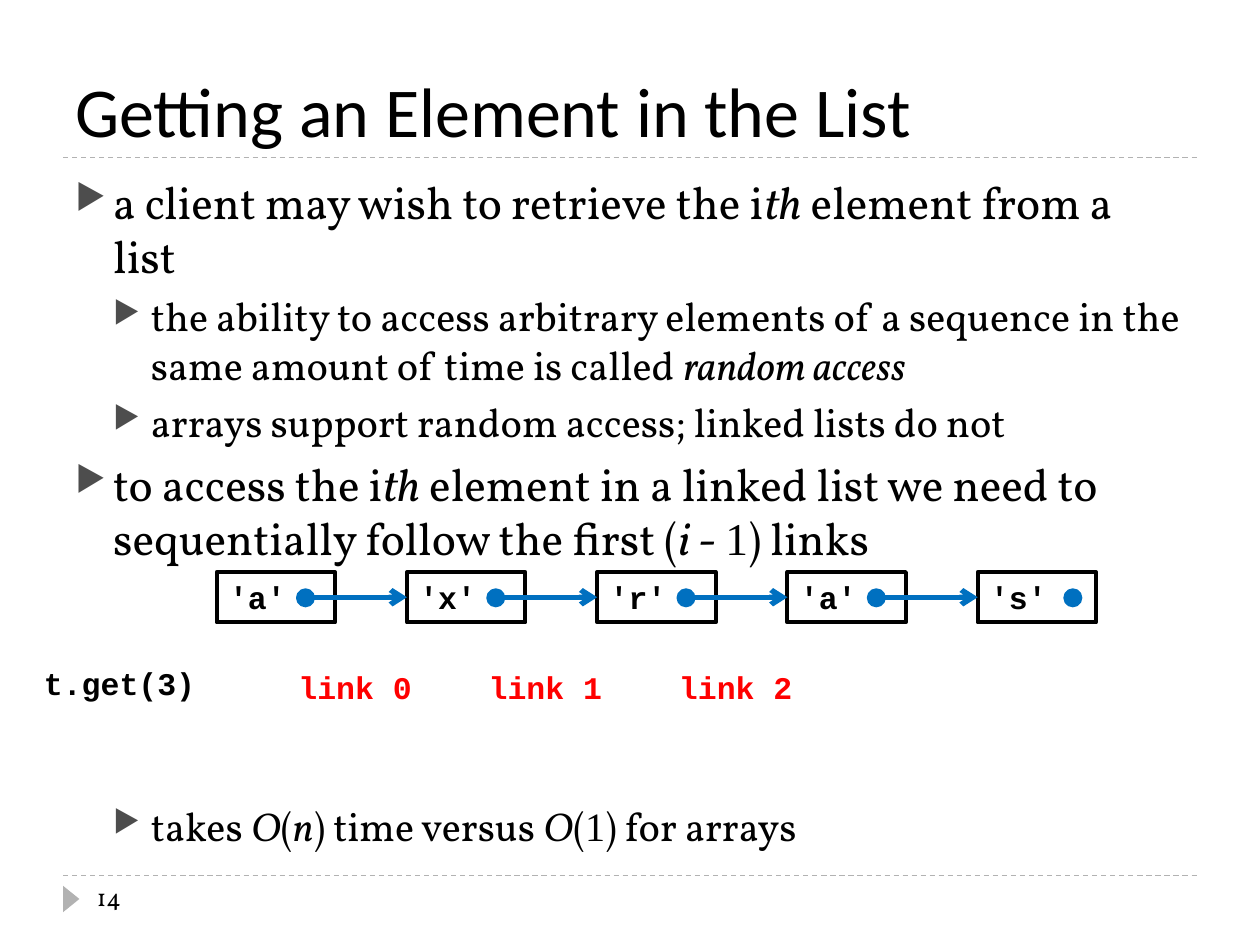
from pptx import Presentation
from pptx.dml.color import RGBColor
from pptx.enum.dml import MSO_LINE
from pptx.enum.shapes import MSO_CONNECTOR, MSO_SHAPE
from pptx.enum.text import MSO_ANCHOR, PP_ALIGN
from pptx.oxml.ns import qn
from pptx.util import Emu, Pt
from lxml import etree

PX = 9144  # 100 px to the inch
STRAIGHT = MSO_CONNECTOR.STRAIGHT
RECTANGLE, OVAL = MSO_SHAPE.RECTANGLE, MSO_SHAPE.OVAL
TRIANGLE = MSO_SHAPE.ISOSCELES_TRIANGLE
DASH = MSO_LINE.DASH
TOP, BOTTOM = MSO_ANCHOR.TOP, MSO_ANCHOR.BOTTOM
LEFT_SIDE = 1

BLACK, RED, BLUE, GREY, BULLET_GREY = "000000", "FF0000", "0070C0", "B2B2B2", "4D4D4D"
HEADING, SERIF, DIGIT, CODE = "Calibri", "Vollkorn", "Times New Roman", "Courier New"

# level, space before in points, runs of (text, style)
BODY = [
    (0, 6, [("a client may wish to retrieve the i", ""), ("th", "italic"),
            (" element from a list", "")]),
    (1, 5, [("the ability to access arbitrary elements of a sequence in the "
             "same amount of time is called ", ""), ("random access", "italic")]),
    (1, 5, [("arrays support random access; linked lists do not", "")]),
    (0, 6, [("to access the i", ""), ("th", "italic"),
            (" element in a linked list we need to sequentially follow the first (", ""),
            ("i", "italic"), (" - ", ""), ("1", "digit"), (") links", "")]),
    # the wide gap leaves room for the linked list
    (1, 135, [("takes ", ""), ("O", "italic"), ("(", ""), ("n", "italic"),
              (") time versus ", ""), ("O", "italic"), ("(", ""), ("1", "digit"),
              (") for arrays", "")]),
]
BODY_SIZES = (26, 23)


def px(length):
    return Emu(length * PX)


def color(hex_string):
    return RGBColor.from_string(hex_string)


def format_run(run, font, size, hex_string, bold=False):
    run.font.name = font
    run.font.size = Pt(size)
    run.font.color.rgb = color(hex_string)
    run.font.bold = bold


def add_text(slide, box, text, font, size, hex_string=BLACK, bold=False,
             anchor=TOP, wrap=True):
    shape = slide.shapes.add_textbox(*map(px, box))
    frame = shape.text_frame
    frame.word_wrap = wrap
    frame.vertical_anchor = anchor
    frame.text = text
    format_run(frame.paragraphs[0].runs[0], font, size, hex_string, bold)


def add_shape(slide, kind, box, fill=None, line=None, width=1):
    shape = slide.shapes.add_shape(kind, *map(px, box))
    shape.shadow.inherit = False
    if fill:
        shape.fill.solid()
        shape.fill.fore_color.rgb = color(fill)
    else:
        shape.fill.background()
    if line:
        shape.line.color.rgb = color(line)
        shape.line.width = Pt(width)
    else:
        shape.line.fill.background()
    return shape


def add_line(slide, start, end, hex_string, width):
    line = slide.shapes.add_connector(STRAIGHT, *map(px, start + end))
    line.line.color.rgb = color(hex_string)
    line.line.width = Pt(width)
    properties = line._element.spPr
    etree.SubElement(properties, qn("a:effectLst"))
    return line


def add_rule(slide, left, top, width):
    rule = add_line(slide, (left, top), (left + width, top), GREY, 0.75)
    rule.line.dash_style = DASH


def add_bullet(paragraph, level):
    """Give the paragraph a hanging indent and a grey triangle bullet."""
    properties = paragraph._p.get_or_add_pPr()
    properties.set("marL", str(30 * (level + 1) * PX))
    properties.set("indent", str(-30 * PX))
    bullet_color = etree.SubElement(properties, qn("a:buClr"))
    etree.SubElement(bullet_color, qn("a:srgbClr"), val=BULLET_GREY)
    etree.SubElement(properties, qn("a:buSzPct"), val="76000")
    etree.SubElement(properties, qn("a:buChar"), char="▶")


def add_header(slide, left, top, width, height):
    add_rule(slide, left, top + height, width)
    add_text(slide, (left, top, width, height), "Getting an Element in the List",
             HEADING, 40, anchor=BOTTOM)


def add_body(slide, left, top, width, height):
    frame = slide.shapes.add_textbox(*map(px, (left, top, width, height))).text_frame
    frame.word_wrap = True
    for index, (level, space, runs) in enumerate(BODY):
        paragraph = frame.add_paragraph() if index else frame.paragraphs[0]
        paragraph.level = level
        paragraph.space_before = Pt(space)
        add_bullet(paragraph, level)
        for text, style in runs:
            run = paragraph.add_run()
            run.text = text
            font = DIGIT if style == "digit" else SERIF
            format_run(run, font, BODY_SIZES[level], BLACK)
            run.font.italic = style == "italic"


def add_linked_list(slide, left, top, values, pitch=151):
    """Draw one box per value, each with a dot that points to the next box."""
    width, height, dot = 94, 40, 13
    middle = top + height // 2
    nodes = []
    for index, value in enumerate(values):
        node = add_shape(slide, RECTANGLE, (left + index * pitch, top, width, height),
                         line=BLACK, width=2.25)
        frame = node.text_frame
        frame.vertical_anchor = TOP
        frame.text = f"'{value}'"
        frame.paragraphs[0].alignment = PP_ALIGN.LEFT
        format_run(frame.paragraphs[0].runs[0], CODE, 18, BLACK, bold=True)
        nodes.append(node)

    for index in range(len(nodes)):
        is_last = index == len(nodes) - 1
        dot_left = left + index * pitch + (69 if is_last else 64)
        if not is_last:
            arrow = add_line(slide, (dot_left + dot // 2, middle),
                             (left + (index + 1) * pitch, middle), BLUE, 3)
            arrow.end_connect(nodes[index + 1], LEFT_SIDE)
            etree.SubElement(arrow.line._get_or_add_ln(), qn("a:tailEnd"), type="arrow")
        add_shape(slide, OVAL, (dot_left, middle - dot // 2, dot, dot), BLUE, BLUE, 1.5)


def add_link_labels(slide, left, top, pitch=151):
    add_text(slide, (left, top, 141, 40), "t.get(3)", CODE, 18, bold=True, wrap=False)
    for index in range(3):
        add_text(slide, (left + 202 + index * pitch, top + 3, 111, 40),
                 f"link {index}", CODE, 18, RED, bold=True, wrap=False)


def add_footer(slide, left, top, width):
    add_rule(slide, left, top, width)
    marker = add_shape(slide, TRIANGLE, (left - 4, top + 12, 21, 13), GREY)
    marker.rotation = 90
    add_text(slide, (left + 17, top, 217, 40), "14", SERIF, 14)


def main():
    presentation = Presentation()
    presentation.slide_width, presentation.slide_height = px(1000), px(750)
    slide = presentation.slides.add_slide(presentation.slide_layouts[6])
    add_header(slide, 50, 17, 900, 108)
    add_body(slide, 50, 133, 900, 540)
    add_footer(slide, 50, 695, 900)
    add_link_labels(slide, 25, 522)
    add_linked_list(slide, 172, 454, "axras")
    presentation.save("out.pptx")


if __name__ == "__main__":
    main()
